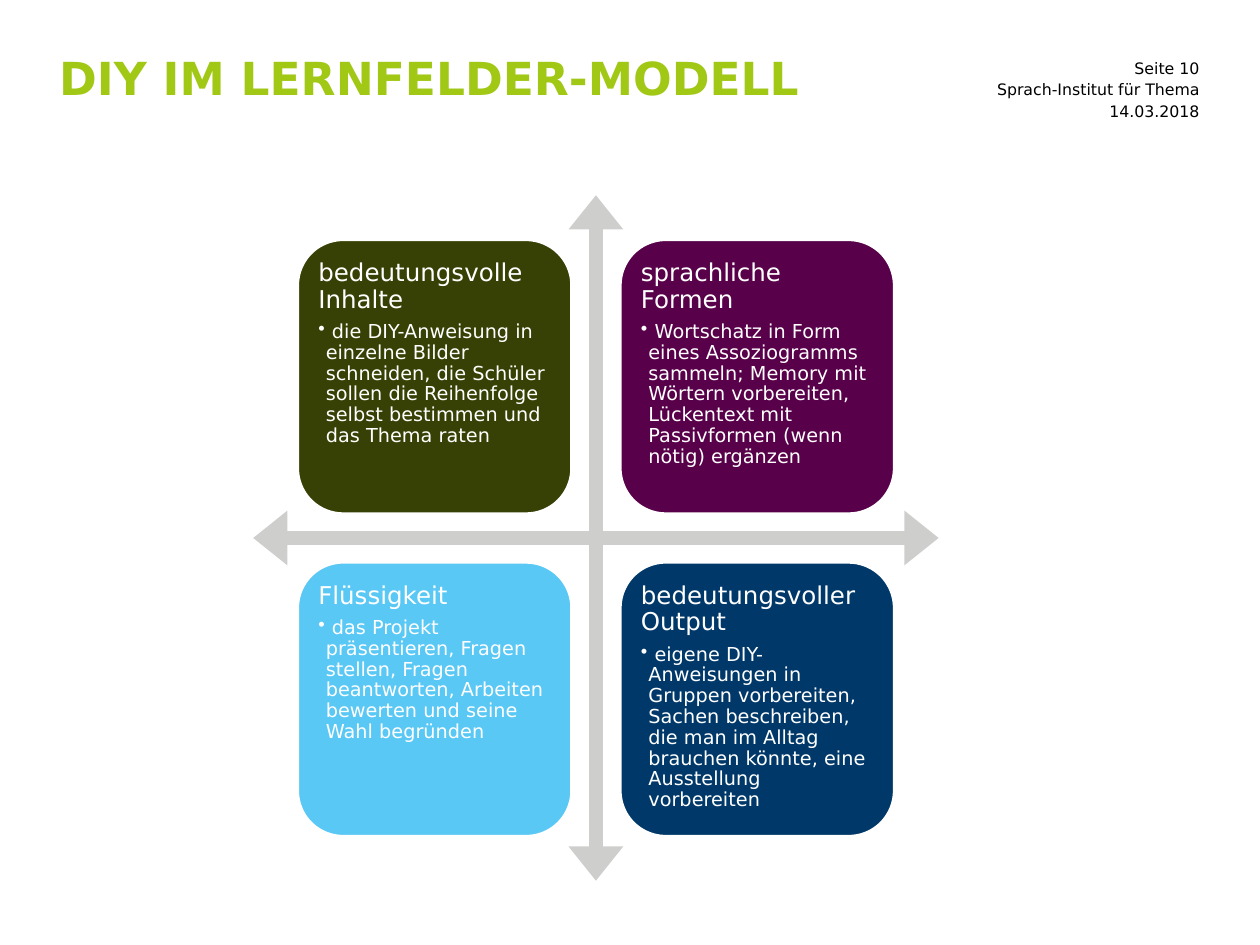
from lxml import etree
from pptx import Presentation
from pptx.dml.color import RGBColor
from pptx.enum import shapes, text
from pptx.oxml.ns import qn
from pptx.util import Inches, Pt

FONT = "DejaVu Sans"
TITLE = "DIY IM LERNFELDER-MODELL"
HEADER_LINES = ["Seite 10", "Sprach-Institut für Thema", "14.03.2018"]
FIELDS = [
    ("bedeutungsvolle Inhalte", "374105",
     "die DIY-Anweisung in einzelne Bilder schneiden, die Schüler sollen "
     "die Reihenfolge selbst bestimmen und das Thema raten"),
    ("sprachliche Formen", "59004A",
     "Wortschatz in Form eines Assoziogramms sammeln; Memory mit Wörtern "
     "vorbereiten, Lückentext mit Passivformen (wenn nötig) ergänzen"),
    ("Flüssigkeit", "5AC8F5",
     "das Projekt präsentieren, Fragen stellen, Fragen beantworten, "
     "Arbeiten bewerten und seine Wahl begründen"),
    ("bedeutungsvoller Output", "003969",
     "eigene DIY-Anweisungen in Gruppen vorbereiten, Sachen beschreiben, "
     "die man im Alltag brauchen könnte, eine Ausstellung vorbereiten"),
]
GRID_LEFT, GRID_TOP, CARD_SIZE, CARD_STEP = 2.36, 1.9, 2.18, 2.56
ARROW_BOX = (2.01, 1.55, 5.44, 5.44)


def color(value):
    return RGBColor.from_string(value)


def set_frame(frame, inset, anchor):
    values = {"word_wrap": True, "vertical_anchor": anchor,
              "auto_size": text.MSO_AUTO_SIZE.NONE}
    values.update({f"margin_{side}": Inches(inset)
                   for side in ("left", "top", "right", "bottom")})
    for name, value in values.items():
        setattr(frame, name, value)


def write(paragraph, content, size, fill, bold=False, **layout):
    """Add one run; layout holds paragraph attributes such as alignment."""
    run = paragraph.add_run()
    run.text = content
    for name, value in {"name": FONT, "size": Pt(size), "bold": bold}.items():
        setattr(run.font, name, value)
    run.font.color.rgb = color(fill)
    for name, value in layout.items():
        setattr(paragraph, name, value)


def add_bullet(paragraph, indent):
    properties = paragraph._p.get_or_add_pPr()
    properties.set("marL", str(Inches(indent)))
    properties.set("indent", str(-Inches(indent)))
    etree.SubElement(properties, qn("a:buChar")).set("char", "•")


def add_filled(slide, kind, box, fill):
    shape = slide.shapes.add_shape(kind, *map(Inches, box))
    shape.shadow.inherit = False
    shape.fill.solid()
    shape.fill.fore_color.rgb = color(fill)
    shape.line.fill.background()
    return shape


def add_card(slide, box, heading, fill, body):
    card = add_filled(slide, shapes.MSO_SHAPE.ROUNDED_RECTANGLE, box, fill)
    card.line.color.rgb = color("FFFFFF")
    card.line.width = Pt(2)
    frame = card.text_frame
    set_frame(frame, 0.06, text.MSO_ANCHOR.TOP)
    layout = {"alignment": text.PP_ALIGN.LEFT, "line_spacing": 0.9}
    write(frame.paragraphs[0], heading, 14, "FFFFFF", space_after=Pt(4.9), **layout)
    bullet = frame.add_paragraph()
    write(bullet, " " + body, 11, "FFFFFF", level=1, space_after=Pt(1.65), **layout)
    add_bullet(bullet, 0.06)


def main():
    presentation = Presentation()
    presentation.slide_width, presentation.slide_height = Inches(10), Inches(7.5)
    slide = presentation.slides.add_slide(presentation.slide_layouts[5])

    title = slide.shapes.title
    title.left, title.top, title.width, title.height = map(
        Inches, (0.47, 0.46, 6.69, 0.5))
    set_frame(title.text_frame, 0, text.MSO_ANCHOR.TOP)
    write(title.text_frame.paragraphs[0], TITLE, 26, "A0C814", bold=True,
          alignment=text.PP_ALIGN.LEFT, line_spacing=0.85)

    for index, line in enumerate(HEADER_LINES):
        box = slide.shapes.add_textbox(
            *map(Inches, (7.32, 0.46 + 0.17 * index, 2.2, 0.16)))
        set_frame(box.text_frame, 0, text.MSO_ANCHOR.MIDDLE)
        write(box.text_frame.paragraphs[0], line, 9, "000000",
              alignment=text.PP_ALIGN.RIGHT)

    arrows = add_filled(slide, shapes.MSO_SHAPE.QUAD_ARROW, ARROW_BOX, "CECFCC")
    for index, value in enumerate((0.02, 0.04, 0.05)):
        arrows.adjustments[index] = value

    for index, field in enumerate(FIELDS):
        row, column = divmod(index, 2)
        box = (GRID_LEFT + column * CARD_STEP, GRID_TOP + row * CARD_STEP,
               CARD_SIZE, CARD_SIZE)
        add_card(slide, box, *field)

    presentation.save("out.pptx")


if __name__ == "__main__":
    main()
